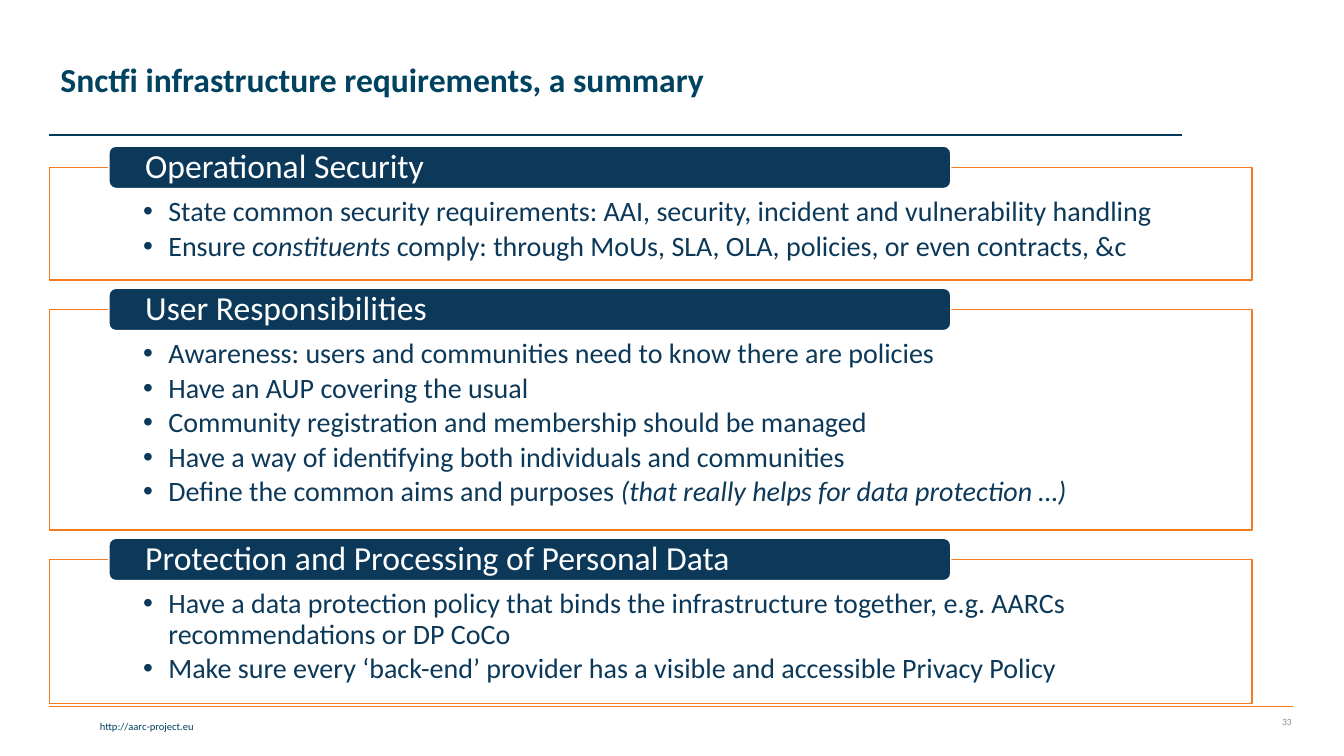
from lxml.etree import SubElement
from pptx import Presentation
from pptx.dml.color import RGBColor
from pptx.enum.shapes import MSO_CONNECTOR as Link, MSO_SHAPE as Kind
from pptx.enum.text import MSO_ANCHOR as Anchor, PP_ALIGN as Align
from pptx.oxml.ns import qn
from pptx.util import Emu, Pt

SCALE = 9144
NAVY = "0C3959"
WHITE = "FFFFFF"
ORANGE = "F57A1E"
GAP = 29
RISE = 21

PARTS = [
    ("Operational Security", 112, [
        "State common security requirements: AAI, security, incident and vulnerability handling",
        "Ensure *constituents *comply: through MoUs, SLA, OLA, policies, or even contracts, &c",
    ]),
    ("User Responsibilities", 219, [
        "Awareness: users and communities need to know there are policies",
        "Have an AUP covering the usual",
        "Community registration and membership should be managed",
        "Have a way of identifying both individuals and communities",
        "Define the common aims and purposes *(that really helps for data protection …)*",
    ]),
    ("Protection and Processing of Personal Data", 143, [
        "Have a data protection policy that binds the infrastructure together, "
        "e.g. AARCs recommendations or DP CoCo",
        "Make sure every ‘back-end’ provider has a visible and accessible Privacy Policy",
    ]),
]


def px(*vals):
    return [Emu(val * SCALE) for val in vals]


def tint(code):
    return RGBColor.from_string(code)


def bullet(para):
    props = para._p.get_or_add_pPr()
    props.set("marL", str(25 * SCALE))
    props.set("indent", str(-25 * SCALE))
    SubElement(props, qn("a:buFont"), typeface="Arial")
    SubElement(props, qn("a:buChar"), char="•")


def write(shape, lines, size, color, bold=False, align=Align.LEFT, anchor=Anchor.TOP,
          pad=(10, 5, 10, 5), lead=None, after=0, dots=False):
    frame = shape.text_frame
    frame.word_wrap = True
    frame.vertical_anchor = anchor
    (frame.margin_left, frame.margin_top,
     frame.margin_right, frame.margin_bottom) = px(*pad)
    for num, line in enumerate(lines):
        para = frame.add_paragraph() if num else frame.paragraphs[0]
        if dots:
            bullet(para)
        para.alignment = align
        para.space_after = Pt(after)
        if lead:
            para.line_spacing = lead
        for pos, piece in enumerate(line.split("*")):
            if piece:
                run = para.add_run()
                run.text = piece
                font = run.font
                font.name = "Calibri"
                font.size = Pt(size)
                font.bold = bold
                font.italic = pos % 2 == 1
                font.color.rgb = tint(color)


def block(slide, kind, area, fill, edge, alpha=None):
    shape = slide.shapes.add_shape(kind, *px(*area))
    shape.shadow.inherit = False
    shape.fill.solid()
    shape.fill.fore_color.rgb = tint(fill)
    if alpha:
        shade = shape._element.spPr.find(qn("a:solidFill"))[0]
        SubElement(shade, qn("a:alpha"), val=str(alpha * 1000))
    shape.line.color.rgb = tint(edge)
    shape.line.width = Pt(1)
    return shape


def rule(slide, left, right, top, color):
    line = slide.shapes.add_connector(Link.STRAIGHT, *px(left, top, right, top))
    line.line.color.rgb = tint(color)
    line.line.width = Pt(1)
    SubElement(line._element.spPr, qn("a:effectLst"))


def label(slide, area, text, size, color, **form):
    box = slide.shapes.add_textbox(*px(*area))
    write(box, [text], size, color, align=Align.RIGHT, **form)


def head(slide, text):
    title = slide.shapes.title
    title.left, title.top, title.width, title.height = px(50, 8, 1051, 145)
    write(title, [text], 24, "004361", bold=True, anchor=Anchor.MIDDLE, lead=0.9)


def panel(slide, top, name, high, items):
    frame = block(slide, Kind.RECTANGLE, (49, top, 1193, high), WHITE, ORANGE, alpha=90)
    write(frame, items, 20, NAVY, pad=(93, 30, 93, 16), lead=0.9, after=3, dots=True)
    bar = block(slide, Kind.ROUNDED_RECTANGLE, (108, top - RISE, 835, 2 * RISE), NAVY, WHITE)
    write(bar, [name], 24, WHITE, anchor=Anchor.MIDDLE, pad=(34, 0, 34, 0), lead=0.9)


def main():
    deck = Presentation()
    deck.slide_width, deck.slide_height = px(1333, 750)
    slide = deck.slides.add_slide(deck.slide_layouts[5])
    rule(slide, 49, 1282, 701, "F57B20")
    label(slide, (3, 709, 199, 23), "http://aarc-project.eu", 7.5, "003F5E")
    rule(slide, 49, 1172, 134, "003959")
    label(slide, (1210, 701, 81, 30), "33", 6.8, "8C8C8C", anchor=Anchor.MIDDLE)
    head(slide, "Snctfi infrastructure requirements, a summary")
    top = 166
    for name, high, items in PARTS:
        panel(slide, top, name, high, items)
        top += high + GAP
    deck.save("out.pptx")


if __name__ == "__main__":
    main()
